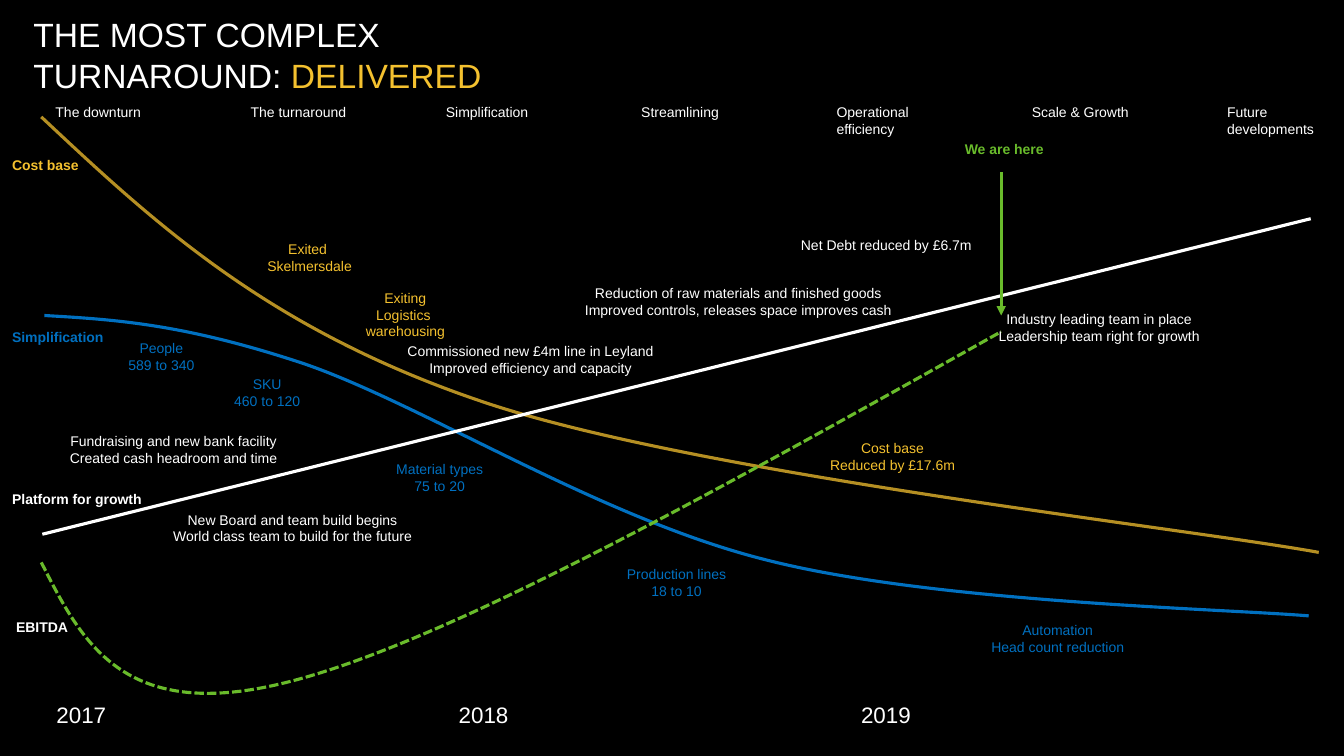
from dataclasses import dataclass

from lxml.etree import SubElement
from pptx import Presentation
from pptx.dml.color import RGBColor
from pptx.enum.dml import MSO_LINE
from pptx.enum.shapes import MSO_CONNECTOR
from pptx.enum.text import MSO_ANCHOR, MSO_AUTO_SIZE, PP_ALIGN
from pptx.oxml.ns import qn
from pptx.util import Inches, Pt


@dataclass(frozen=True)
class Theme:
    font: str = "Arial"
    black: RGBColor = RGBColor.from_string("000000")
    white: RGBColor = RGBColor.from_string("FFFFFF")
    gold: RGBColor = RGBColor.from_string("F4C12F")
    bronze: RGBColor = RGBColor.from_string("B58F23")
    blue: RGBColor = RGBColor.from_string("0070C0")
    green: RGBColor = RGBColor.from_string("69BB2B")
    title_size: Pt = Pt(24)
    year_size: Pt = Pt(16)
    label_size: Pt = Pt(10)
    line_width: Pt = Pt(2.25)


theme = Theme()

presentation = Presentation()
presentation.slide_width = Inches(13.33)
presentation.slide_height = Inches(7.5)
slide = presentation.slides.add_slide(presentation.slide_layouts[5])
slide.background.fill.solid()
slide.background.fill.fore_color.rgb = theme.black


def write_text(shape, left, top, text, size, color, alignment=PP_ALIGN.LEFT, bold=False):
    lines = text.split("\n")
    width = max(len(line) for line in lines) * size.inches * 0.63
    if alignment == PP_ALIGN.CENTER:
        left = left + 0.47 - width / 2
    box = {"left": left, "top": top, "width": width, "height": len(lines) * size.inches * 1.2}
    for name, value in box.items():
        setattr(shape, name, Inches(value))
    frame = shape.text_frame
    frame.text = text
    frame_format = {
        "margin_left": 0, "margin_top": 0, "margin_right": 0, "margin_bottom": 0,
        "word_wrap": False, "auto_size": MSO_AUTO_SIZE.NONE,
        "vertical_anchor": MSO_ANCHOR.TOP,
    }
    for name, value in frame_format.items():
        setattr(frame, name, value)
    for paragraph in frame.paragraphs:
        paragraph.alignment = alignment
        paragraph.line_spacing = 1.0
        for run in paragraph.runs:
            for name, value in {"name": theme.font, "size": size, "bold": bold}.items():
                setattr(run.font, name, value)
            run.font.color.rgb = color


def add_straight_line(start, end, color):
    points = [Inches(value) for value in (*start, *end)]
    connector = slide.shapes.add_connector(MSO_CONNECTOR.STRAIGHT, *points)
    connector.line.color.rgb = color
    connector.line.width = theme.line_width
    SubElement(connector._element.spPr, qn("a:effectLst"))
    return connector


curves = [
    (theme.bronze, None, 5.48,
     [(0.41, 1.16), (1.53, 2.21), (2.65, 3.26), (4.77, 3.98),
      (6.88, 4.7), (11.7, 5.23), (13.08, 5.48)]),
    (theme.blue, None, 6.11,
     [(0.44, 3.13), (1.13, 3.17), (1.82, 3.21), (3.02, 3.61), (4.21, 4.02),
      (5.96, 5.15), (7.62, 5.56), (9.28, 5.98), (12.15, 6.04), (12.98, 6.11)]),
    (theme.green, MSO_LINE.SQUARE_DOT, 6.88,
     [(0.41, 5.58), (0.81, 6.37), (1.22, 7.16), (2.8, 6.78),
      (4.39, 6.4), (7.16, 4.84), (9.93, 3.29)]),
]
for color, dash, bottom, points in curves:
    nodes = [(Inches(x), Inches(y)) for x, y in points]
    builder = slide.shapes.build_freeform(*nodes[0])
    builder.add_line_segments(nodes[1:], close=False)
    curve = builder.convert_to_shape()
    curve.shadow.inherit = False
    curve.fill.background()
    curve.line.color.rgb = color
    curve.line.width = theme.line_width
    curve.line.dash_style = dash
    outline = next(curve._element.iter(qn("a:path")))
    segments = outline.findall(qn("a:lnTo"))
    for first in range(0, len(segments), 3):
        bezier = SubElement(outline, qn("a:cubicBezTo"))
        for segment in segments[first:first + 3]:
            bezier.append(segment[0])
            outline.remove(segment)
    curve.height = Inches(bottom) - curve.top
    outline.set("h", str(curve.height))

add_straight_line((0.42, 5.3), (13, 2.17), theme.white)
arrow = add_straight_line((9.93, 1.71), (9.93, 3.13), theme.green)
SubElement(arrow.line._get_or_add_ln(), qn("a:tailEnd"), type="triangle")

title = slide.shapes.title
write_text(title, 0.33, 0.14, "THE MOST COMPLEX\nTURNAROUND: ", theme.title_size, theme.white)
title.width = Inches(5)
delivered = title.text_frame.paragraphs[1].add_run()
delivered.text = "DELIVERED"
for name, value in {"name": theme.font, "size": theme.title_size, "bold": False}.items():
    setattr(delivered.font, name, value)
delivered.font.color.rgb = theme.gold

phases = ["The downturn", "The turnaround", "Simplification", "Streamlining",
          "Operational\nefficiency", "Scale & Growth", "Future\ndevelopments"]
years = ["2017", "2018", "2019"]
rows = [(phases, 0.55, 11.62 / 6, 1.03, theme.label_size),
        (years, 0.56, 3.99, 6.96, theme.year_size)]
for texts, left, step, top, size in rows:
    for index, text in enumerate(texts):
        shape = slide.shapes.add_textbox(0, 0, 0, 0)
        write_text(shape, left + index * step, top, text, size, theme.white)

curve_names = [
    (0.12, 1.55, "Cost base", theme.gold),
    (0.12, 3.26, "Simplification", theme.blue),
    (0.12, 4.87, "Platform for growth", theme.white),
    (0.16, 6.14, "EBITDA", theme.white),
]
here_marker = [(9.49, 1.39, "We are here", theme.green)]
milestones = [
    (1.13, 3.37, "People\n589 to 340", theme.blue),
    (2.18, 3.73, "SKU\n460 to 120", theme.blue),
    (3.89, 4.57, "Material types\n75 to 20", theme.blue),
    (6.24, 5.61, "Production lines\n18 to 10", theme.blue),
    (10.02, 6.17, "Automation\nHead count reduction", theme.blue),
    (1.25, 4.29, "Fundraising and new bank facility\nCreated cash headroom and time", theme.white),
    (2.43, 5.07, "New Board and team build begins\nWorld class team to build for the future", theme.white),
    (4.79, 3.4, "Commissioned new £4m line in Leyland\nImproved efficiency and capacity", theme.white),
    (6.85, 2.82, "Reduction of raw materials and finished goods\n"
                 "Improved controls, releases space improves cash", theme.white),
    (8.32, 2.35, "Net Debt reduced by £6.7m", theme.white),
    (10.43, 3.08, "Industry leading team in place\nLeadership team right for growth", theme.white),
    (2.6, 2.39, "Exited \nSkelmersdale", theme.gold),
    (3.55, 2.87, "Exiting\nLogistics \nwarehousing", theme.gold),
    (8.4, 4.36, "Cost base \nReduced by £17.6m ", theme.gold),
]
label_groups = [(curve_names, PP_ALIGN.LEFT, True),
                (here_marker, PP_ALIGN.CENTER, True),
                (milestones, PP_ALIGN.CENTER, False)]
for labels, alignment, bold in label_groups:
    for left, top, text, color in labels:
        shape = slide.shapes.add_textbox(0, 0, 0, 0)
        write_text(shape, left, top, text, theme.label_size, color, alignment, bold)

presentation.save("out.pptx")
